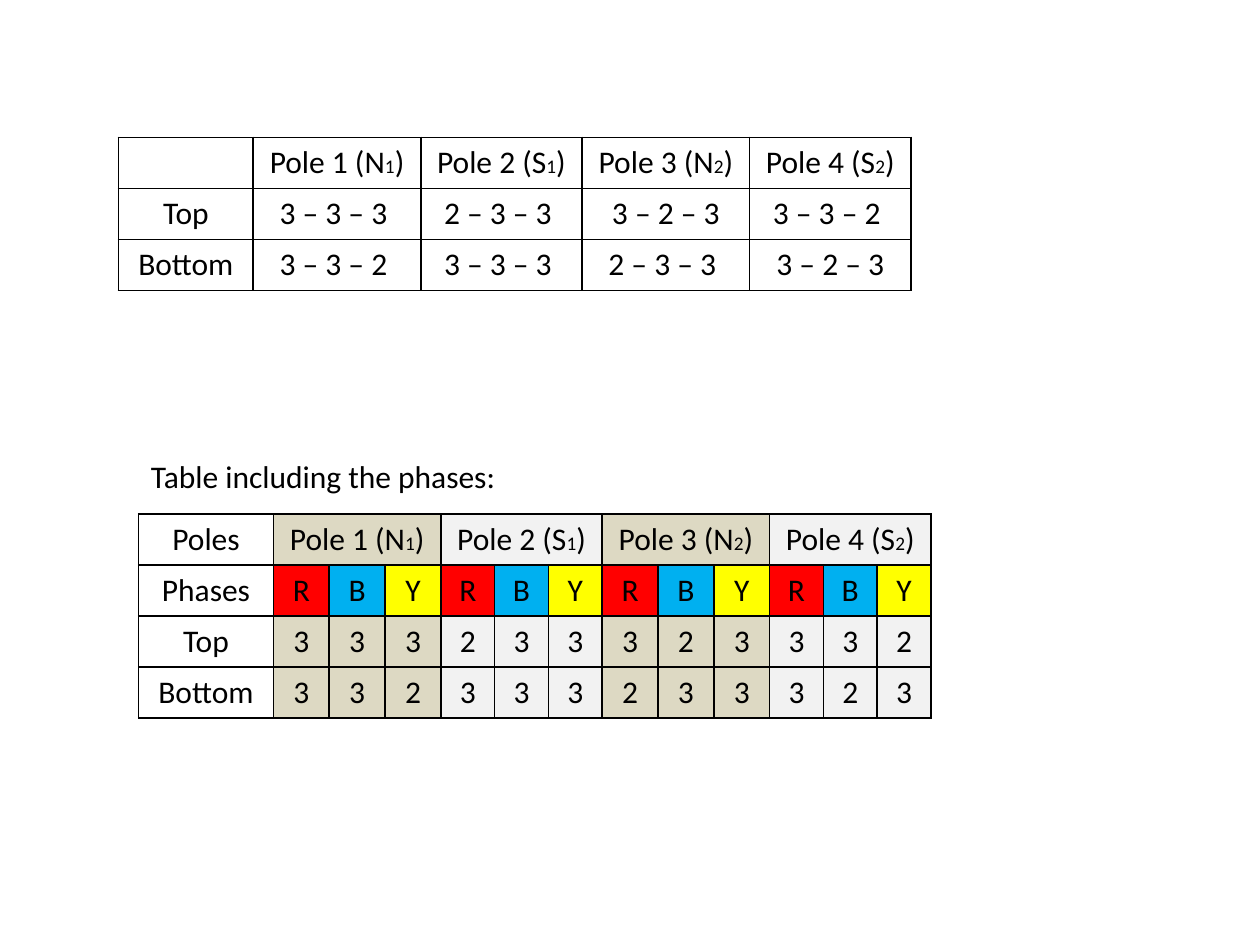
import pptx
import pptx.dml.color
import pptx.enum.text
import pptx.oxml
import pptx.oxml.ns
import pptx.util

COLORS = {
    "ink": "000000",
    "north": "DDD9C3",
    "south": "F2F2F2",
    "R": "FF0000",
    "B": "00B0F0",
    "Y": "FFFF00",
}
FONT = "Calibri"
TEXT_SIZE = 18
SUBSCRIPT_SIZE = 11

LABEL_WIDTH = 1.07
POLE_WIDTHS = [1.33, 1.28, 1.33, 1.28]
ROW_HEIGHT = 1.62 / 4

POLES = [("Pole 1 (N", "1", ")"), ("Pole 2 (S", "1", ")"),
         ("Pole 3 (N", "2", ")"), ("Pole 4 (S", "2", ")")]
POLE_FILLS = ["north", "south", "north", "south"]
PHASES = ["R", "B", "Y"]
COILS = {
    "Top": ["3 – 3 – 3 ", "2 – 3 – 3 ", "3 – 2 – 3", "3 – 3 – 2 "],
    "Bottom": ["3 – 3 – 2 ", "3 – 3 – 3 ", "2 – 3 – 3 ", "3 – 2 – 3"],
}


def inches(*lengths):
    return [pptx.util.Inches(length) for length in lengths]


def color(name):
    return pptx.dml.color.RGBColor.from_string(COLORS[name])


def write_text(paragraph, text):
    """Write a string, or a (base, subscript, end) tuple with a smaller middle part."""
    parts = [text] if isinstance(text, str) else text
    for index, part in enumerate(parts):
        run = paragraph.add_run()
        run.text = part
        if index == 1:
            run.font.size = pptx.util.Pt(SUBSCRIPT_SIZE)
    paragraph.font.name = FONT
    paragraph.font.size = pptx.util.Pt(TEXT_SIZE)
    paragraph.font.color.rgb = color("ink")


def add_borders(cell):
    properties = cell._tc.get_or_add_tcPr()
    for side in ("lnL", "lnR", "lnT", "lnB"):
        properties.append(pptx.oxml.parse_xml(
            f'<a:{side} {pptx.oxml.ns.nsdecls("a")} w="{pptx.util.Pt(1)}">'
            f'<a:solidFill><a:srgbClr val="{COLORS["ink"]}"/></a:solidFill></a:{side}>'))


def add_grid(slide, left, top, widths, row_count):
    """Add a bordered table without fills."""
    frame = slide.shapes.add_table(
        row_count, len(widths),
        *inches(left, top, sum(widths), row_count * ROW_HEIGHT))
    table = frame.table
    table.first_row = table.horz_banding = False
    for column, width in zip(table.columns, widths):
        column.width = pptx.util.Inches(width)
    for cell in table.iter_cells():
        add_borders(cell)
        cell.fill.background()
    return table


def fill_cell(cell, text, fill=None):
    paragraph = cell.text_frame.paragraphs[0]
    paragraph.alignment = pptx.enum.text.PP_ALIGN.CENTER
    write_text(paragraph, text)
    if fill:
        cell.fill.solid()
        cell.fill.fore_color.rgb = color(fill)


def add_coil_table(slide, left, top):
    table = add_grid(slide, left, top, [LABEL_WIDTH, *POLE_WIDTHS], 1 + len(COILS))
    for column, pole in enumerate(POLES, start=1):
        fill_cell(table.cell(0, column), pole)
    for row, (label, coils) in enumerate(COILS.items(), start=1):
        for column, text in enumerate([label, *coils]):
            fill_cell(table.cell(row, column), text)


def add_phase_table(slide, left, top):
    """Add the table that splits each pole into one column per phase."""
    phase_count = len(PHASES)
    phase_widths = [width / phase_count for width in POLE_WIDTHS for _ in PHASES]
    table = add_grid(slide, left, top, [LABEL_WIDTH, *phase_widths], 2 + len(COILS))
    for row, label in enumerate(["Poles", "Phases", *COILS]):
        fill_cell(table.cell(row, 0), label)
    for pole_index, (pole, pole_fill) in enumerate(zip(POLES, POLE_FILLS)):
        first = 1 + pole_index * phase_count
        header = table.cell(0, first)
        header.merge(table.cell(0, first + phase_count - 1))
        fill_cell(header, pole, pole_fill)
        for column, phase in enumerate(PHASES, start=first):
            fill_cell(table.cell(1, column), phase, phase)
        for row, coils in enumerate(COILS.values(), start=2):
            counts = coils[pole_index].strip().split(" – ")
            for column, count in enumerate(counts, start=first):
                fill_cell(table.cell(row, column), count, pole_fill)


def add_caption(slide, text, left, top, width, height):
    frame = slide.shapes.add_textbox(*inches(left, top, width, height)).text_frame
    frame.word_wrap = False
    frame.auto_size = pptx.enum.text.MSO_AUTO_SIZE.SHAPE_TO_FIT_TEXT
    write_text(frame.paragraphs[0], text)


def main():
    presentation = pptx.Presentation()
    presentation.slide_width, presentation.slide_height = inches(10, 7.5)
    slide = presentation.slides.add_slide(presentation.slide_layouts[6])
    add_coil_table(slide, 0.94, 1.09)
    add_caption(slide, "Table including the phases:", 1.1, 3.58, 2.97, 0.4)
    add_phase_table(slide, 1.1, 4.08)
    presentation.save("out.pptx")


if __name__ == "__main__":
    main()
